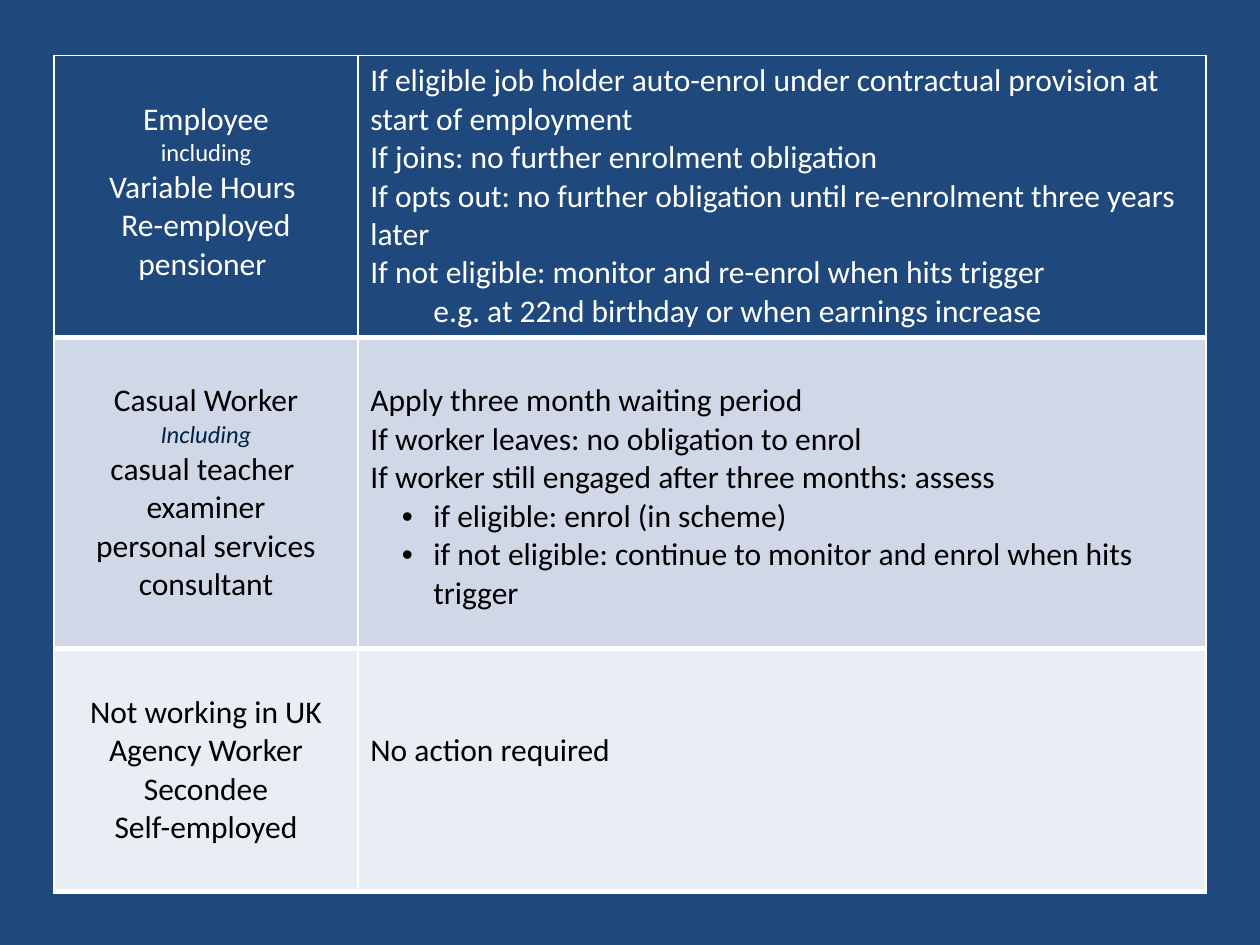
"""Build a slide with a table of enrolment duties by type of worker."""
from pptx import Presentation
from pptx.dml.color import RGBColor
from pptx.enum.text import PP_ALIGN
from pptx.oxml import parse_xml
from pptx.oxml.ns import nsdecls
from pptx.util import Inches, Pt

NAVY = RGBColor(0x1F, 0x49, 0x7D)
WHITE = RGBColor(0xFF, 0xFF, 0xFF)
BLACK = RGBColor(0x00, 0x00, 0x00)
DARK_BLUE = RGBColor(0x00, 0x21, 0x47)
PALE_BLUE = RGBColor(0xD0, 0xD8, 0xE8)
PALER_BLUE = RGBColor(0xE9, 0xED, 0xF4)

LINE_HEIGHT = 0.305
COLUMN_WIDTHS = [2.41, 6.73]
NOTE_STYLES = {"including": (WHITE, False), "Including": (DARK_BLUE, True)}

ROWS = [
    {
        "height": 2.23, "fill": NAVY, "color": WHITE, "lines_above": (1, 0),
        "workers": ["Employee", "including", "Variable Hours ", "Re-employed pensioner "],
        "duties": [
            ("plain", "If eligible job holder auto-enrol under contractual provision at start of employment"),
            ("plain", "If joins: no further enrolment obligation"),
            ("plain", "If opts out: no further obligation until re-enrolment three years later"),
            ("plain", "If not eligible: monitor and re-enrol when hits trigger"),
            ("indent", "e.g. at 22nd birthday or when earnings increase"),
        ],
    },
    {
        "height": 2.47, "fill": PALE_BLUE, "color": BLACK, "lines_above": (1, 1),
        "workers": ["Casual Worker", "Including", "casual teacher ", "examiner",
                    "personal services consultant"],
        "duties": [
            ("plain", "Apply three month waiting period"),
            ("plain", "If worker leaves: no obligation to enrol"),
            ("plain", "If worker still engaged after three months: assess"),
            ("bullet", "if eligible: enrol (in scheme)"),
            ("bullet", "if not eligible: continue to monitor and enrol when hits trigger"),
        ],
    },
    {
        "height": 1.93, "fill": PALER_BLUE, "color": BLACK, "lines_above": (1, 2),
        "workers": ["Not working in UK", "Agency Worker", "Secondee", "Self-employed"],
        "duties": [("plain", "No action required")],
    },
]


def set_borders(cell, top_width):
    properties = cell._tc.get_or_add_tcPr()
    widths = {"lnL": 1, "lnR": 1, "lnT": top_width, "lnB": 3}
    for position, (side, width) in enumerate(widths.items()):
        line = parse_xml(
            f'<a:{side} {nsdecls("a")} w="{Pt(width)}"><a:solidFill>'
            f'<a:srgbClr val="{WHITE}"/></a:solidFill></a:{side}>')
        properties.insert(position, line)


def set_indent(paragraph, kind):
    paragraph.level = 1
    properties = paragraph._p.get_or_add_pPr()
    properties.set("marL", str(Inches(0.5)))
    properties.set("indent", str(Inches(-0.25 if kind == "bullet" else 0)))
    if kind == "bullet":
        bullet_font = parse_xml(f'<a:buFont {nsdecls("a")} typeface="Arial"/>')
        bullet = parse_xml(f'<a:buChar {nsdecls("a")} char="•"/>')
        properties.insert(0, bullet_font)
        properties.insert(1, bullet)


def fill_cell(cell, row, lines, lines_above, alignment, top_width):
    cell.fill.solid()
    cell.fill.fore_color.rgb = row["fill"]
    set_borders(cell, top_width)
    cell.margin_top = Inches(0.05 + lines_above * LINE_HEIGHT)
    frame = cell.text_frame
    for number, (kind, text) in enumerate(lines):
        paragraph = frame.add_paragraph() if number else frame.paragraphs[0]
        paragraph.text = text
        paragraph.alignment = alignment
        color, italic = NOTE_STYLES.get(text, (row["color"], False))
        font = paragraph.font
        font.name = "Calibri"
        font.size = Pt(14 if text in NOTE_STYLES else 18)
        font.bold = False
        font.italic = italic
        font.color.rgb = color
        if kind != "plain":
            set_indent(paragraph, kind)


def main():
    deck = Presentation()
    deck.slide_width, deck.slide_height = Inches(10), Inches(7.5)
    page = deck.slides.add_slide(deck.slide_layouts[6])
    page.background.fill.solid()
    page.background.fill.fore_color.rgb = NAVY

    heights = [row["height"] for row in ROWS]
    table = page.shapes.add_table(
        len(ROWS), len(COLUMN_WIDTHS), Inches(0.43), Inches(0.44),
        Inches(sum(COLUMN_WIDTHS)), Inches(sum(heights))).table
    table.first_row = table.horz_banding = False
    for column, width in zip(table.columns, COLUMN_WIDTHS):
        column.width = Inches(width)

    for index, row in enumerate(ROWS):
        table.rows[index].height = Inches(row["height"])
        workers = [("plain", worker) for worker in row["workers"]]
        contents = [(workers, PP_ALIGN.CENTER), (row["duties"], PP_ALIGN.LEFT)]
        for column, (lines, alignment) in enumerate(contents):
            fill_cell(table.cell(index, column), row, lines,
                      row["lines_above"][column], alignment, 3 if index else 1)

    deck.save("out.pptx")


if __name__ == "__main__":
    main()
